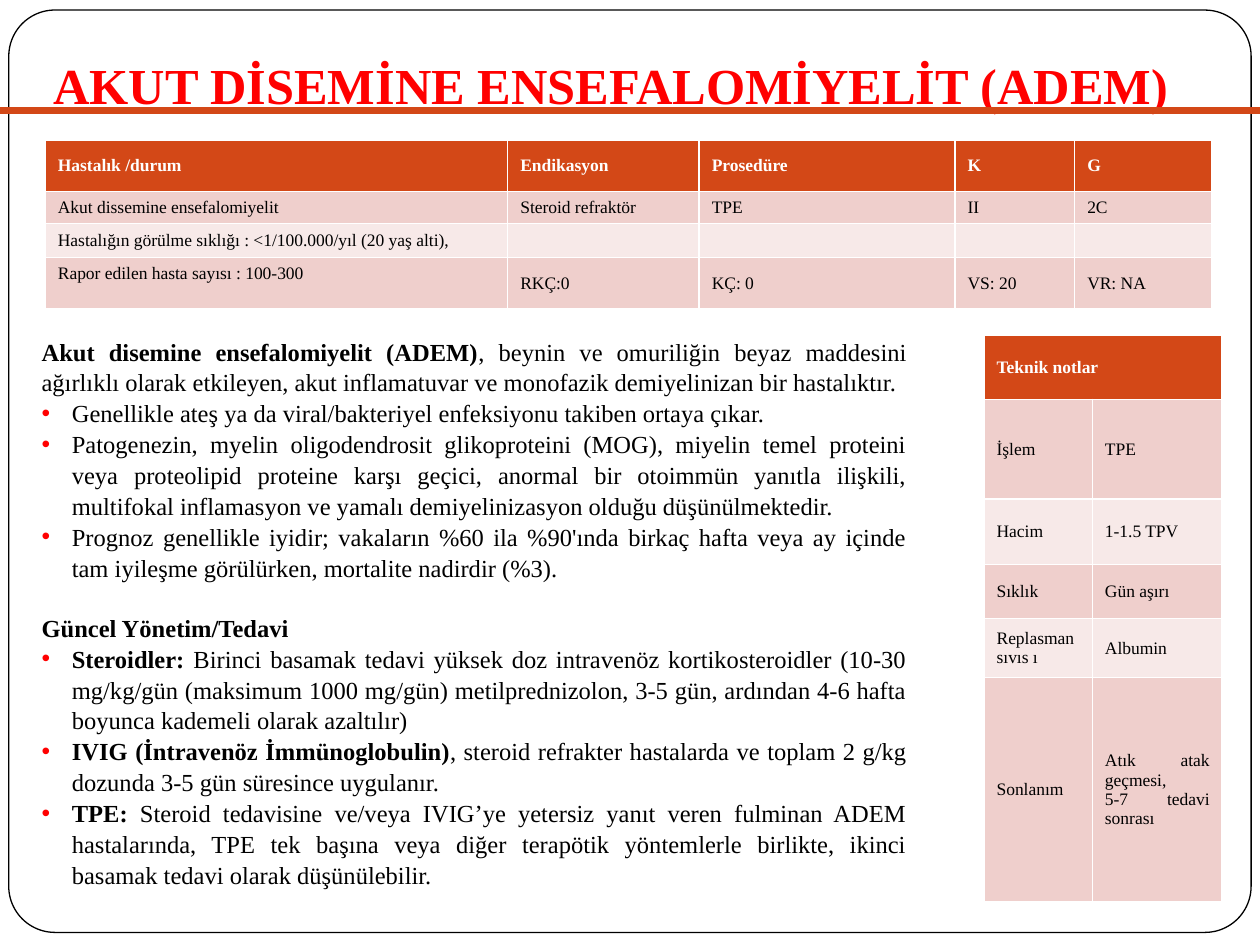
"""Build the ADEM slide with its indication table, text and technical notes."""
import lxml.etree
import pptx
import pptx.dml.color
import pptx.enum.shapes
import pptx.enum.text
import pptx.oxml.ns
import pptx.util

Inches = pptx.util.Inches
Pt = pptx.util.Pt
qn = pptx.oxml.ns.qn
ALIGN = pptx.enum.text.PP_ALIGN
ANCHOR = pptx.enum.text.MSO_ANCHOR
FONT = "Times New Roman"
COLORS = {
    "white": "FFFFFF", "black": "000000", "red": "FF0000",
    "orange": "D34817", "band": "EFCFCC", "pale": "F7E9E8",
}


def add_span(para, text, size, color, bold=False):
    span = para.add_run()
    span.text = text
    span.font.name = FONT
    span.font.size = Pt(size)
    span.font.bold = bold
    span.font.color.rgb = pptx.dml.color.RGBColor.from_string(COLORS[color])


def add_grid(page, left, top, widths, heights, rows):
    frame = page.shapes.add_table(
        len(heights), len(widths), Inches(left), Inches(top),
        Inches(sum(widths)), Inches(sum(heights)))
    table = frame.table
    for column, width in zip(table.columns, widths):
        column.width = Inches(width)
    for index, (height, texts) in enumerate(zip(heights, rows)):
        table.rows[index].height = Inches(height)
        fill = "orange" if index == 0 else ("band" if index % 2 else "pale")
        for cell, text in zip(table.rows[index].cells, texts):
            cell.fill.solid()
            cell.fill.fore_color.rgb = pptx.dml.color.RGBColor.from_string(COLORS[fill])
            cell.vertical_anchor = ANCHOR.MIDDLE
            for number, line in enumerate(text.split("\n")):
                para = cell.text_frame.paragraphs[0] if number == 0 else cell.text_frame.add_paragraph()
                para.alignment = ALIGN.JUSTIFY
                if line:
                    add_span(para, line, 10, "white" if index == 0 else "black", index == 0)
                else:
                    lxml.etree.SubElement(para._p, qn("a:endParaRPr"), sz="1000")
    return table


deck = pptx.Presentation()
deck.slide_width = Inches(10)
deck.slide_height = Inches(7.5)
page = deck.slides.add_slide(deck.slide_layouts[1])

border = page.shapes.add_shape(
    pptx.enum.shapes.MSO_SHAPE.ROUNDED_RECTANGLE,
    Inches(0.07), Inches(0.08), Inches(9.86), Inches(7.32))
border.adjustments[0] = 0.05
border.shadow.inherit = False
border.fill.solid()
border.fill.fore_color.rgb = pptx.dml.color.RGBColor.from_string(COLORS["white"])
border.line.color.rgb = pptx.dml.color.RGBColor.from_string(COLORS["black"])
border.line.width = Pt(0.75)
border._element.getparent().insert(2, border._element)

title = page.shapes.title
title.left, title.top = Inches(0.2), Inches(0.18)
title.width, title.height = Inches(9.3), Inches(0.83)
title.text_frame.auto_size = pptx.enum.text.MSO_AUTO_SIZE.NONE
title.text_frame.vertical_anchor = ANCHOR.BOTTOM
title.text_frame.margin_bottom = Inches(0.1)
heading = title.text_frame.paragraphs[0]
heading.alignment = ALIGN.CENTER
add_span(heading, "AKUT DİSEMİNE ENSEFALOMİYELİT (ADEM)", 28.8, "red", True)

rule = page.shapes.add_connector(
    pptx.enum.shapes.MSO_CONNECTOR.STRAIGHT, 0, Inches(0.88), Inches(10), Inches(0.88))
rule.line.color.rgb = pptx.dml.color.RGBColor.from_string(COLORS["orange"])
rule.line.width = Pt(4)
lxml.etree.SubElement(rule._element.spPr, qn("a:effectLst"))

PARAGRAPHS = [
    (False, 0, "Akut disemine ensefalomiyelit (ADEM)",
     ", beynin ve omuriliğin beyaz maddesini ağırlıklı olarak etkileyen, akut inflamatuvar "
     "ve monofazik demiyelinizan bir hastalıktır."),
    (True, 0, "", "Genellikle ateş ya da viral/bakteriyel enfeksiyonu takiben ortaya çıkar."),
    (True, 0, "",
     "Patogenezin, myelin oligodendrosit glikoproteini (MOG), miyelin temel proteini veya "
     "proteolipid proteine karşı geçici, anormal bir otoimmün yanıtla ilişkili, multifokal "
     "inflamasyon ve yamalı demiyelinizasyon olduğu düşünülmektedir."),
    (True, 0, "",
     "Prognoz genellikle iyidir; vakaların %60 ila %90'ında birkaç hafta veya ay içinde tam "
     "iyileşme görülürken, mortalite nadirdir (%3)."),
    (False, 16.8, "Güncel Yönetim/Tedavi", ""),
    (True, 0, "Steroidler: ",
     "Birinci basamak tedavi yüksek doz intravenöz kortikosteroidler (10-30 mg/kg/gün "
     "(maksimum 1000 mg/gün) metilprednizolon, 3-5 gün, ardından 4-6 hafta boyunca kademeli "
     "olarak azaltılır)"),
    (True, 0, "IVIG (İntravenöz İmmünoglobulin)",
     ", steroid refrakter hastalarda ve toplam 2 g/kg dozunda 3-5 gün süresince uygulanır."),
    (True, 0, "TPE: ",
     "Steroid tedavisine ve/veya IVIG’ye yetersiz yanıt veren fulminan ADEM hastalarında, TPE "
     "tek başına veya diğer terapötik yöntemlerle birlikte, ikinci basamak tedavi olarak "
     "düşünülebilir."),
]
body = page.placeholders[1]
body.left, body.top = Inches(0.23), Inches(2.61)
body.width, body.height = Inches(7.07), Inches(3.12)
body.text_frame.auto_size = pptx.enum.text.MSO_AUTO_SIZE.NONE
body.text_frame.vertical_anchor = ANCHOR.TOP
for index, (bulleted, gap, strong, plain) in enumerate(PARAGRAPHS):
    para = body.text_frame.paragraphs[0] if index == 0 else body.text_frame.add_paragraph()
    para.alignment = ALIGN.JUSTIFY
    para.line_spacing = 1.05
    para.space_before = Pt(gap)
    indent = Inches(0.24) if bulleted else 0
    settings = para._p.get_or_add_pPr()
    settings.set("marL", str(indent))
    settings.set("indent", str(-indent))
    if bulleted:
        tint = lxml.etree.SubElement(settings, qn("a:buClr"))
        lxml.etree.SubElement(tint, qn("a:srgbClr"), val=COLORS["red"])
        lxml.etree.SubElement(settings, qn("a:buFont"), typeface="Arial")
        lxml.etree.SubElement(settings, qn("a:buChar"), char="•")
    else:
        lxml.etree.SubElement(settings, qn("a:buNone"))
    for text, bold in ((strong, True), (plain, False)):
        if text:
            add_span(para, text, 14, "black", bold)

indications = add_grid(
    page, 0.36, 1.11, [3.67, 1.52, 2.03, 0.95, 1.09], [0.41, 0.25, 0.25, 0.41],
    [
        ["Hastalık /durum", "Endikasyon", "Prosedüre", "K", "G"],
        ["Akut dissemine ensefalomiyelit", "Steroid refraktör", "TPE", "II", "2C"],
        ["Hastalığın görülme sıklığı : <1/100.000/yıl (20 yaş alti),", "", "", "", ""],
        ["Rapor edilen hasta sayısı : 100-300", "RKÇ:0", "KÇ: 0", "VS: 20", "VR: NA"],
    ])
indications.cell(3, 0).vertical_anchor = ANCHOR.TOP

notes = add_grid(
    page, 7.81, 2.66, [0.86, 1.03], [0.51, 0.79, 0.52, 0.43, 0.47, 1.78],
    [
        ["Teknik notlar", ""],
        ["İşlem", "TPE"],
        ["Hacim", "1-1.5 TPV"],
        ["Sıklık", "Gün aşırı"],
        ["Replasman sıvıs ı", "Albumin"],
        ["Sonlanım", "Atık atak geçmesi,\n5-7 tedavi sonrası"],
    ])
notes.cell(0, 0).merge(notes.cell(0, 1))

deck.save("out.pptx")
